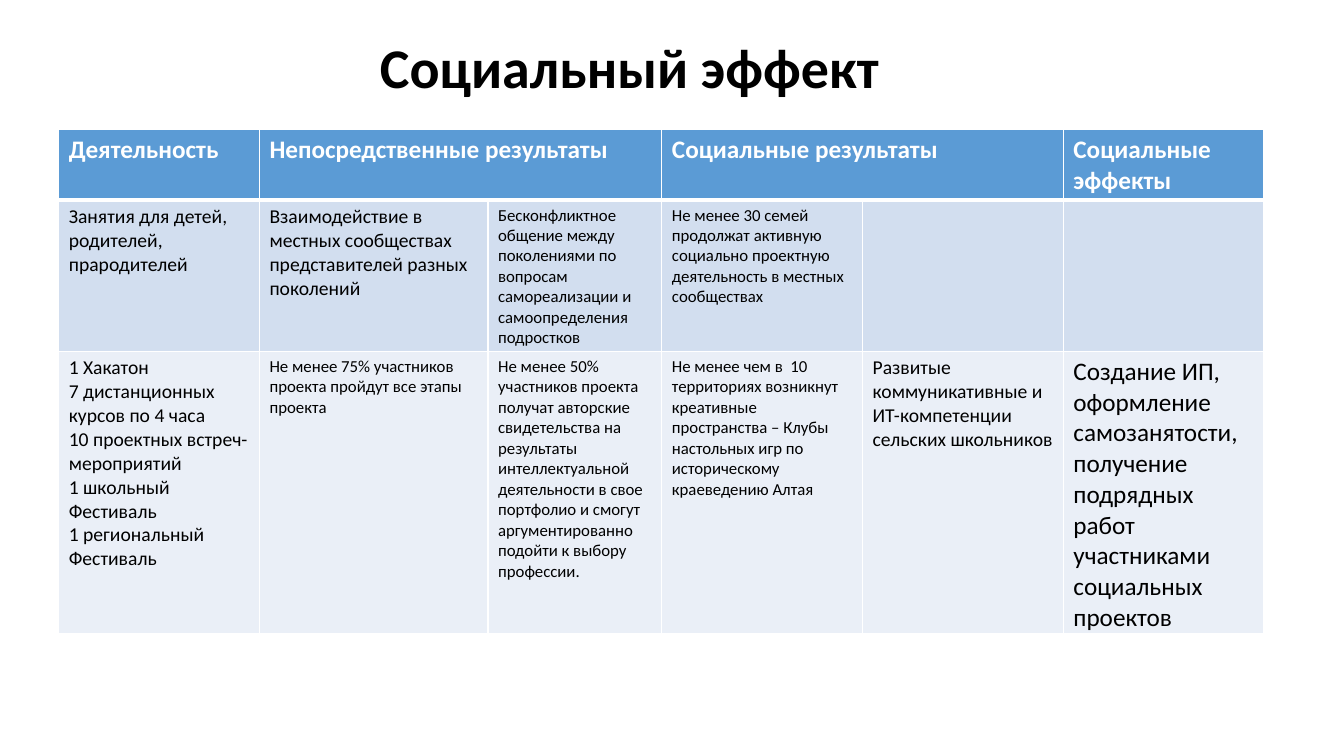
from dataclasses import dataclass

from lxml import etree
from pptx import Presentation
from pptx.dml.color import RGBColor
from pptx.enum.text import PP_ALIGN
from pptx.oxml.ns import qn
from pptx.util import Cm, Pt

CENTER = PP_ALIGN.CENTER
BLANK_LAYOUT = 6


@dataclass(frozen=True)
class Theme:
    font: str = "Calibri"
    text: str = "000000"
    inverse: str = "FFFFFF"
    header_fill: str = "5B9BD5"
    row_fills: tuple = ("D2DEEF", "EAEFF7")
    border: str = "FFFFFF"
    thin: int = 1
    thick: int = 3
    title: int = 40
    large: int = 18
    medium: int = 14
    small: int = 12


THEME = Theme()
COLUMN_WIDTHS = (5.06, 5.76, 4.38, 5.06, 5.06, 5.06)
ROW_HEIGHTS = (1.78, 3.81, 7.11)

# Header cells: text and number of columns covered
HEADER = (
    ("Деятельность", 1),
    ("Непосредственные результаты", 2),
    ("Социальные результаты", 2),
    ("Социальные эффекты", 1),
)

# Body cells: text and type size
ROWS = (
    (
        ("Занятия для детей, родителей, прародителей", THEME.medium),
        ("Взаимодействие в местных сообществах представителей разных поколений",
         THEME.medium),
        ("Бесконфликтное общение между поколениями по вопросам самореализации "
         "и самоопределения подростков", THEME.small),
        ("Не менее 30 семей продолжат активную социально проектную "
         "деятельность в местных сообществах", THEME.small),
        ("", THEME.large),
        ("", THEME.large),
    ),
    (
        ("1 Хакатон\n7 дистанционных курсов по 4 часа\n"
         "10 проектных встреч-мероприятий\n1 школьный Фестиваль\n"
         "1 региональный Фестиваль", THEME.medium),
        ("Не менее 75% участников проекта пройдут все этапы проекта", THEME.small),
        ("Не менее 50% участников проекта получат авторские свидетельства на "
         "результаты интеллектуальной деятельности в свое портфолио и смогут "
         "аргументированно подойти к выбору профессии.", THEME.small),
        ("Не менее чем в  10 территориях возникнут креативные пространства – "
         "Клубы настольных игр по историческому краеведению Алтая", THEME.small),
        ("Развитые коммуникативные и ИТ-компетенции сельских школьников",
         THEME.medium),
        ("Создание ИП, оформление самозанятости, получение подрядных работ "
         "участниками социальных проектов", THEME.large),
    ),
)


class SlideBuilder:
    def __init__(self, slide, theme):
        self.slide = slide
        self.theme = theme

    def set_text(self, text_frame, text, size, color, bold=False, alignment=None):
        text_frame.text = text
        for paragraph in text_frame.paragraphs:
            paragraph.alignment = alignment
            font = paragraph.font
            font.name = self.theme.font
            font.size = Pt(size)
            font.bold = bold
            font.color.rgb = RGBColor.from_string(color)

    def title(self, text, left, top, width, height):
        box = self.slide.shapes.add_textbox(Cm(left), Cm(top), Cm(width), Cm(height))
        box.text_frame.word_wrap = True
        self.set_text(box.text_frame, text, self.theme.title, self.theme.text,
                      bold=True, alignment=CENTER)

    def table(self, left, top, widths, heights):
        frame = self.slide.shapes.add_table(
            len(heights), len(widths), Cm(left), Cm(top),
            Cm(sum(widths)), Cm(sum(heights)))
        table = frame.table
        for column, width in zip(table.columns, widths):
            column.width = Cm(width)
        for row, height in zip(table.rows, heights):
            row.height = Cm(height)
        return table

    def paint_cell(self, cell, fill, top, bottom):
        """Fill a cell and draw its borders; top and bottom are line widths."""
        properties = cell._tc.get_or_add_tcPr()
        thin = self.theme.thin
        for side, width in (("L", thin), ("R", thin), ("T", top), ("B", bottom)):
            line = etree.SubElement(properties, qn(f"a:ln{side}"), w=str(Pt(width)))
            solid = etree.SubElement(line, qn("a:solidFill"))
            etree.SubElement(solid, qn("a:srgbClr"), val=self.theme.border)
        cell.fill.solid()
        cell.fill.fore_color.rgb = RGBColor.from_string(fill)

    def header_row(self, table, header):
        theme = self.theme
        for cell in table.rows[0].cells:
            self.paint_cell(cell, theme.header_fill, theme.thin, theme.thick)
        column = 0
        for text, span in header:
            cell = table.cell(0, column)
            if span > 1:
                cell.merge(table.cell(0, column + span - 1))
            self.set_text(cell.text_frame, text, theme.large, theme.inverse, bold=True)
            column += span

    def body_rows(self, table, rows):
        theme = self.theme
        for row, (contents, fill) in enumerate(zip(rows, theme.row_fills), start=1):
            top = theme.thick if row == 1 else theme.thin
            for cell, (text, size) in zip(table.rows[row].cells, contents):
                self.paint_cell(cell, fill, top, theme.thin)
                self.set_text(cell.text_frame, text, size, theme.text)


def main():
    presentation = Presentation()
    presentation.slide_width = Cm(33.87)
    presentation.slide_height = Cm(19.05)
    slide = presentation.slides.add_slide(presentation.slide_layouts[BLANK_LAYOUT])

    builder = SlideBuilder(slide, THEME)
    builder.title("Социальный эффект", 0.81, 0.69, 30.1, 1.96)
    table = builder.table(1.48, 3.26, COLUMN_WIDTHS, ROW_HEIGHTS)
    builder.header_row(table, HEADER)
    builder.body_rows(table, ROWS)

    presentation.save("out.pptx")


if __name__ == "__main__":
    main()
